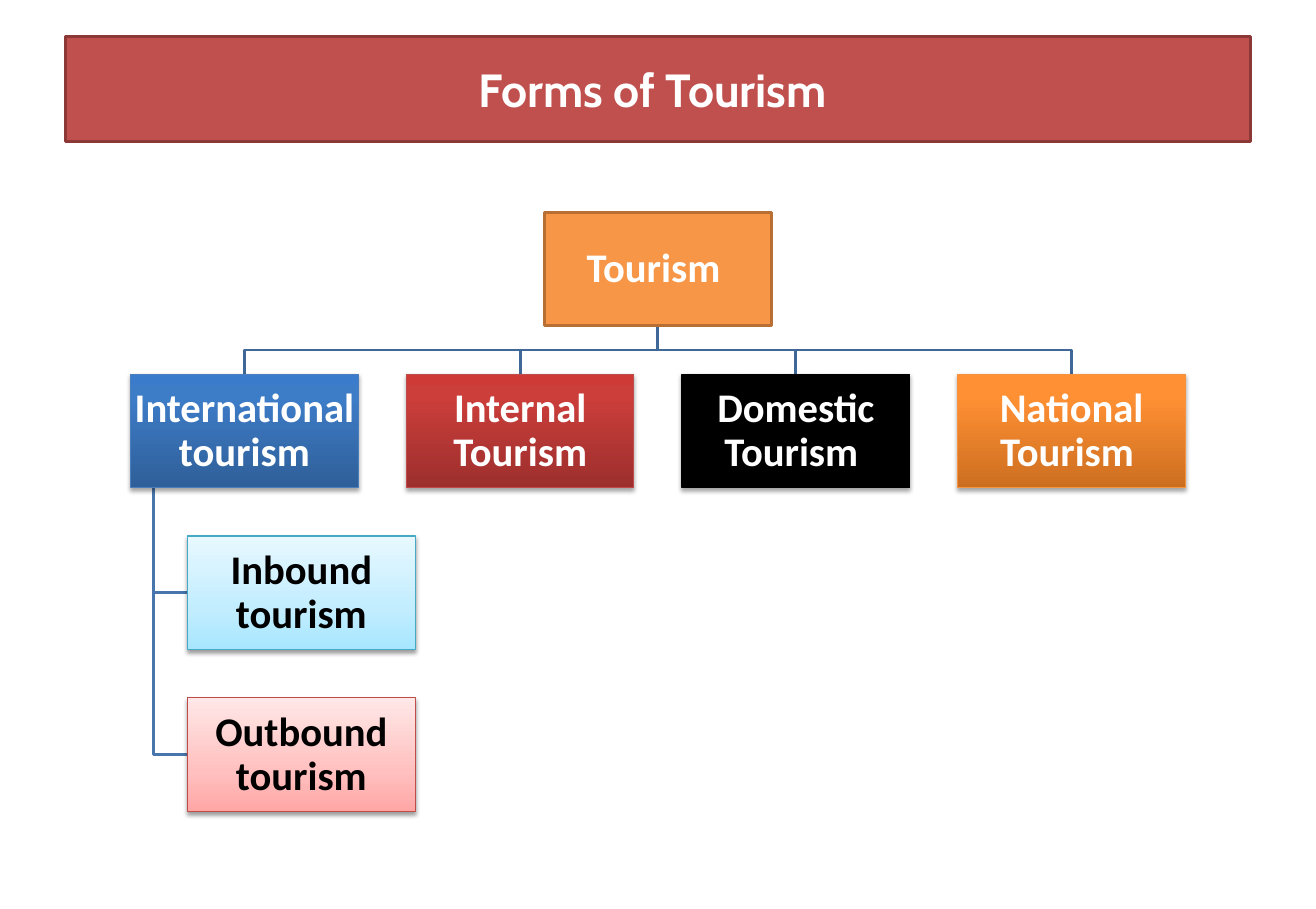
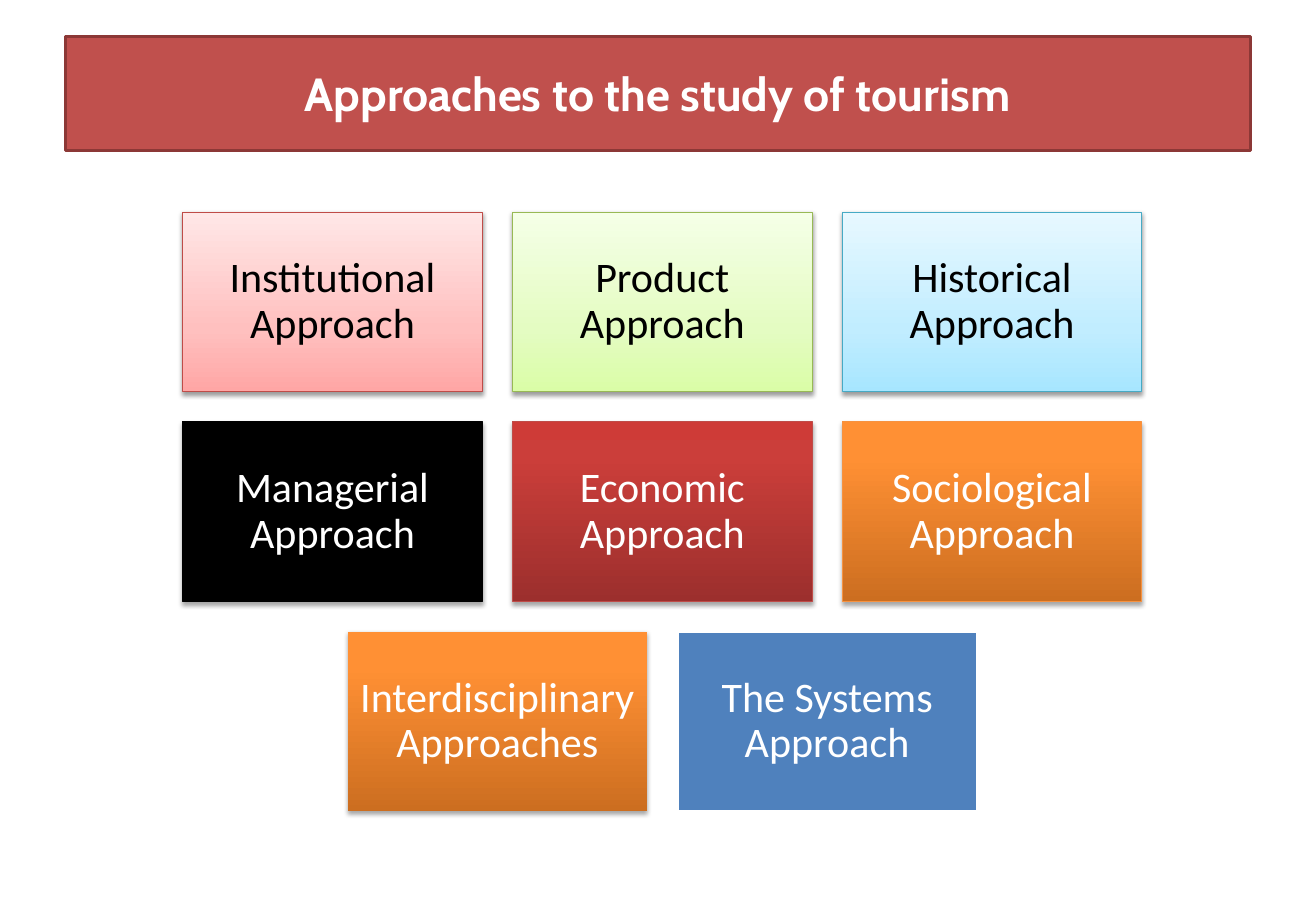
from dataclasses import dataclass

from lxml.etree import SubElement
from pptx import Presentation
from pptx.dml.color import RGBColor
from pptx.enum.shapes import MSO_AUTO_SHAPE_TYPE as ShapeType
from pptx.enum.text import MSO_VERTICAL_ANCHOR as Anchor, PP_PARAGRAPH_ALIGNMENT as Align
from pptx.oxml.ns import qn
from pptx.util import Inches, Pt


# Theme: colours, fonts and type sizes
@dataclass(frozen=True)
class Look:
    fill: tuple          # one colour, or (percent, colour) stops from the bottom up
    line: str = ""
    width: float = 0.75
    text: str = "FFFFFF"
    shadow: tuple = ()   # opacity in percent, distance in points


DEEP, SOFT = (35, 1.8), (38, 1.6)


class Theme:
    title = Look(("C0504D",), "8C3836", 2)
    root = Look(("F79646",), "B76F34", 2)
    plain_blue = Look(("4F81BD",), "FFFFFF", 2)
    black = Look(("000000",), "000000", shadow=DEEP)
    blue = Look(((0, "2F5F99"), (80, "3D7CC7"), (100, "3A7CCB")), "4B7EBC", shadow=DEEP)
    red = Look(((0, "9C2F2D"), (80, "CB3E3A"), (100, "CE3B37")), "BF4C48", shadow=DEEP)
    orange = Look(((0, "CC6E20"), (80, "FF9034"), (100, "FF9136")), "F69240", shadow=DEEP)
    orange_no_line = Look(orange.fill, shadow=DEEP)
    sky = Look(((0, "A7E6FF"), (35, "C1EDFF"), (100, "E7F8FF")), "46AAC5", text="000000", shadow=SOFT)
    pink = Look(((0, "FFA6A5"), (35, "FFC0BF"), (100, "FFE7E7")), "BF4C48", text="000000", shadow=SOFT)
    green = Look(((0, "DAFDA7"), (35, "E4FCC2"), (100, "F5FFE7")), "98B955", text="000000", shadow=SOFT)
    branch, twig = "3F6797", "4875AC"
    title_font = {"name": "Cabin", "size": Pt(32), "bold": True}
    tree_font = {"name": "Calibri", "size": Pt(28), "bold": True}
    card_font = {"name": "Calibri", "size": Pt(29), "bold": False}


def add_box(slide, text, look, area, font, inset, spacing=0.9):
    """Add a rectangle with centred text; area is left, top, width, height in inches."""
    shape = slide.shapes.add_shape(ShapeType.RECTANGLE, *map(Inches, area))
    shape.shadow.inherit = False
    properties = shape._element.spPr
    if len(look.fill) == 1:
        shape.fill.solid()
        shape.fill.fore_color.rgb = RGBColor.from_string(look.fill[0])
    else:
        shape.fill.gradient()
        shape.fill.gradient_angle = 90
        stops = properties.find(".//" + qn("a:gsLst"))
        stops.clear()
        for percent, colour in look.fill:
            stop = SubElement(stops, qn("a:gs"), pos=str(percent * 1000))
            SubElement(stop, qn("a:srgbClr"), val=colour)
    if look.line:
        shape.line.color.rgb = RGBColor.from_string(look.line)
        shape.line.width = Pt(look.width)
    else:
        shape.line.fill.background()
    if look.shadow:
        opacity, distance = look.shadow
        shadow = SubElement(properties.find(qn("a:effectLst")), qn("a:outerShdw"),
                            blurRad=str(Pt(3.1)), dist=str(Pt(distance)),
                            dir="5400000", rotWithShape="0")
        colour = SubElement(shadow, qn("a:srgbClr"), val="000000")
        SubElement(colour, qn("a:alpha"), val=str(opacity * 1000))

    frame = shape.text_frame
    paragraph = frame.paragraphs[0]
    run = paragraph.add_run()
    run.text = text
    run.font.color.rgb = RGBColor.from_string(look.text)
    margins = {f"margin_{side}": Inches(inset) for side in ("left", "top", "right", "bottom")}
    for target, values in (
        (frame, {"word_wrap": True, "vertical_anchor": Anchor.MIDDLE, **margins}),
        (paragraph, {"alignment": Align.CENTER, "line_spacing": spacing}),
        (run.font, font),
    ):
        for name, value in values.items():
            setattr(target, name, value)


def add_path(slide, points, colour):
    """Add an open line through points given in inches."""
    start, *others = [(Inches(x), Inches(y)) for x, y in points]
    builder = slide.shapes.build_freeform(*start)
    builder.add_line_segments(others, close=False)
    shape = builder.convert_to_shape()
    shape.shadow.inherit = False
    shape.fill.background()
    shape.line.color.rgb = RGBColor.from_string(colour)
    shape.line.width = Pt(2)


WIDTH, HEIGHT = 12.6, 8.7
TOP = 2.03
presentation = Presentation()
presentation.slide_width, presentation.slide_height = Inches(WIDTH), Inches(HEIGHT)

# Slides with their title bands
slides = []
for title, band_height in (("Forms of Tourism ", 1.01), ("Approaches to the study of tourism", 1.09)):
    slide = presentation.slides.add_slide(presentation.slide_layouts[6])
    band = (WIDTH * 0.05, HEIGHT * 0.04, WIDTH * 0.9, band_height)
    add_box(slide, title, Theme.title, band, Theme.title_font, 0.08, 1.0)
    slides.append(slide)
tree_slide, card_slide = slides

# Tree: grid and nodes as text, look, column, row
node_width, node_height = 2.18, 1.09
column_step, row_step = node_width + 0.46, node_height + 0.46
tree_left = 1.25
child = node_width / 4 / column_step
nodes = (
    ("Tourism ", Theme.root, 1.5, 0),
    ("International tourism", Theme.blue, 0, 1),
    ("Internal Tourism", Theme.red, 1, 1),
    ("Domestic Tourism ", Theme.black, 2, 1),
    ("National Tourism ", Theme.orange, 3, 1),
    ("Inbound tourism", Theme.sky, child, 2),
    ("Outbound tourism", Theme.pink, child, 3),
)

# Tree: branches from the root to the four forms
root_x, root_bottom = WIDTH / 2, TOP + node_height
forms_top = TOP + row_step
middle = (root_bottom + forms_top) / 2
for column in range(4):
    x = tree_left + column * column_step + node_width / 2
    add_path(tree_slide, [(root_x, root_bottom), (root_x, middle), (x, middle), (x, forms_top)], Theme.branch)

# Tree: twigs from international tourism to its two kinds
trunk_x, child_x = tree_left + node_width / 10, tree_left + node_width / 4
for row in (2, 3):
    y = TOP + row * row_step + node_height / 2
    add_path(tree_slide, [(trunk_x, forms_top + node_height), (trunk_x, y), (child_x, y)], Theme.twig)

for text, look, column, row in nodes:
    area = (tree_left + column * column_step, TOP + row * row_step, node_width, node_height)
    add_box(tree_slide, text, look, area, Theme.tree_font, 0.02)

# Approaches: rows of cards, the short last row centred
card_width, card_height = 2.87, 1.72
gap = card_width / 10
cards_left = 1.75
card_rows = (
    (("Institutional Approach", Theme.pink), ("Product Approach", Theme.green),
     ("Historical Approach", Theme.sky)),
    (("Managerial Approach", Theme.black), ("Economic Approach", Theme.red),
     ("Sociological Approach", Theme.orange)),
    (("Interdisciplinary Approaches", Theme.orange_no_line), ("The Systems Approach", Theme.plain_blue)),
)
for row, cards in enumerate(card_rows):
    indent = (3 - len(cards)) / 2
    for column, (text, look) in enumerate(cards):
        area = (cards_left + (column + indent) * (card_width + gap),
                TOP + row * (card_height + gap), card_width, card_height)
        add_box(card_slide, text, look, area, Theme.card_font, 0.12)

presentation.save("out.pptx")
